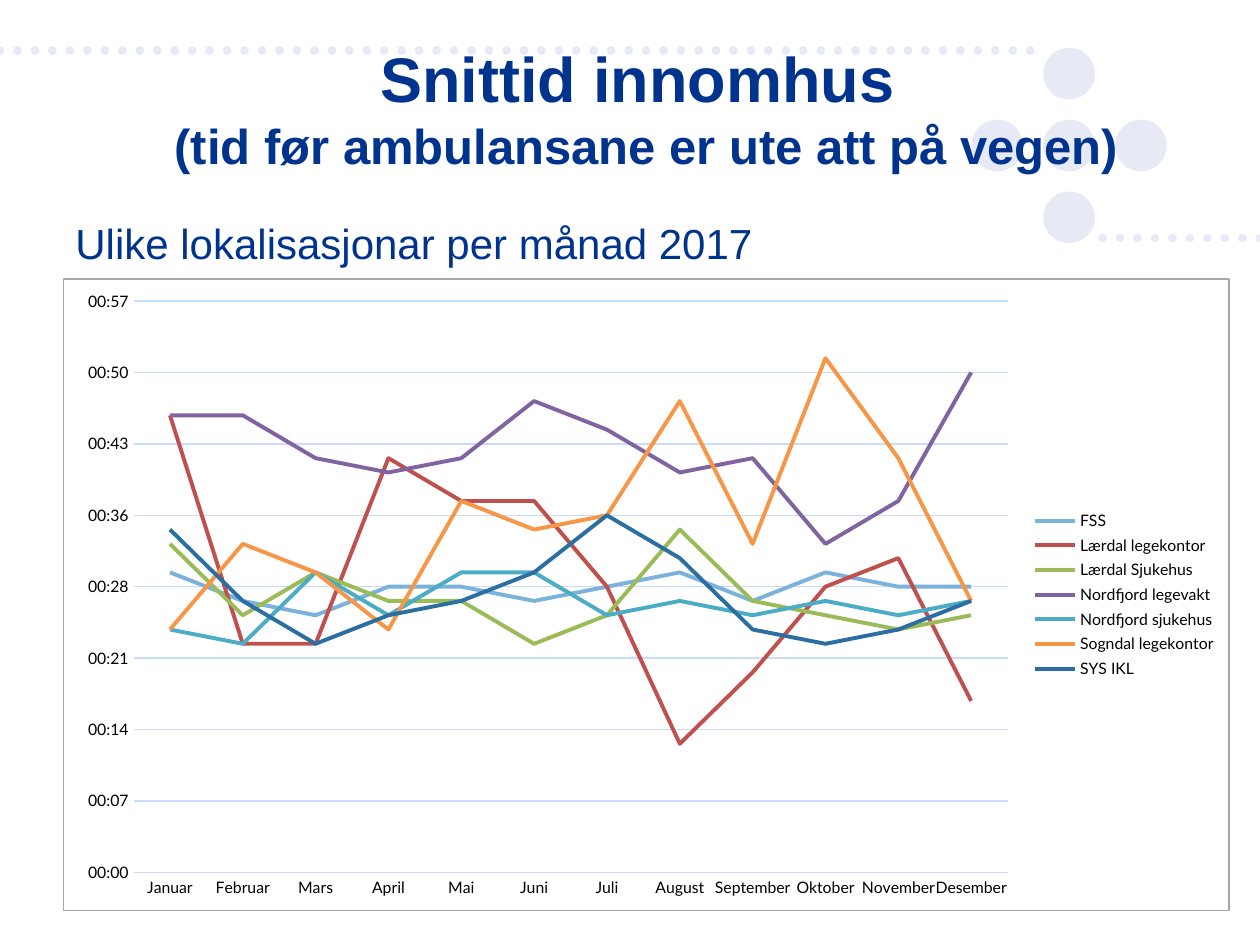
from lxml import etree
from pptx import Presentation
from pptx import oxml
from pptx.chart import data as cd
from pptx.dml.color import RGBColor
from pptx.enum import chart as ec, shapes as es, text as et
from pptx.oxml import ns
from pptx.util import Inches, Pt

NAVY = RGBColor(0x00, 0x33, 0x8D)
PALE = RGBColor(0xE7, 0xE9, 0xF5)
GRID = RGBColor(0xC8, 0xDC, 0xFF)
BLACK = RGBColor(0, 0, 0)

MONTHS = ["Januar", "Februar", "Mars", "April", "Mai", "Juni", "Juli", "August",
          "September", "Oktober", "November", "Desember"]
SITES = [
    ("FSS", RGBColor(0x7A, 0xB2, 0xDC),
     [.021, .019, .018, .02, .02, .019, .02, .021, .019, .021, .02, .02]),
    ("Lærdal legekontor", RGBColor(0xC0, 0x50, 0x4D),
     [.032, .016, .016, .029, .026, .026, .02, .009, .014, .02, .022, .012]),
    ("Lærdal Sjukehus", RGBColor(0x9B, 0xBB, 0x59),
     [.023, .018, .021, .019, .019, .016, .018, .024, .019, .018, .017, .018]),
    ("Nordfjord legevakt", RGBColor(0x80, 0x64, 0xA2),
     [.032, .032, .029, .028, .029, .033, .031, .028, .029, .023, .026, .035]),
    ("Nordfjord sjukehus", RGBColor(0x4B, 0xAC, 0xC6),
     [.017, .016, .021, .018, .021, .021, .018, .019, .018, .019, .018, .019]),
    ("Sogndal legekontor", RGBColor(0xF7, 0x96, 0x46),
     [.017, .023, .021, .017, .026, .024, .025, .033, .023, .036, .029, .019]),
    ("SYS IKL", RGBColor(0x2B, 0x6F, 0xA2),
     [.024, .019, .016, .018, .019, .021, .025, .022, .017, .016, .017, .019]),
]
FRAME = """<c:spPr %s><a:solidFill><a:srgbClr val="FFFFFF"/></a:solidFill>
<a:ln w="9525"><a:solidFill><a:srgbClr val="A6A6A6"/></a:solidFill></a:ln></c:spPr>"""
LAYOUT = """<c:layout %s><c:manualLayout><c:layoutTarget val="inner"/>
<c:xMode val="edge"/><c:yMode val="edge"/><c:x val="0.06"/><c:y val="0.035"/>
<c:w val="0.75"/><c:h val="0.905"/></c:manualLayout></c:layout>"""


def add_run(para, words, size, bold=False):
    """Add one navy run to a paragraph."""
    run = para.add_run()
    run.text = words
    font = run.font
    font.name, font.size, font.bold = "Arial", Pt(size), bold
    font.color.rgb = NAVY


def add_dots(slide, left, right, top):
    """Draw a level row of round dots."""
    line = slide.shapes.add_connector(
        es.MSO_CONNECTOR.STRAIGHT, Inches(left), Inches(top), Inches(right), Inches(top))
    line.line.color.rgb = PALE
    line.line.width = Pt(5)
    ln = line.line._get_or_add_ln()
    ln.set("cap", "rnd")
    etree.SubElement(ln, ns.qn("a:prstDash")).set("val", "sysDot")
    etree.SubElement(line._element.spPr, ns.qn("a:effectLst"))


def add_cross(slide, left, top, step, size):
    """Draw five discs as a cross, starting from the middle disc's corner."""
    for col, row in [(0, -1), (0, 1), (0, 0), (-1, 0), (1, 0)]:
        disc = slide.shapes.add_shape(
            es.MSO_SHAPE.OVAL, Inches(left + col * step), Inches(top + row * step),
            Inches(size), Inches(size))
        disc.shadow.inherit = False
        disc.fill.solid()
        disc.fill.fore_color.rgb = PALE
        disc.line.fill.background()


def set_title(slide, left, top, width, height):
    """Place the two-line title in front of the dots."""
    title = slide.shapes.title
    title.left, title.top = Inches(left), Inches(top)
    title.width, title.height = Inches(width), Inches(height)
    frame = title.text_frame
    frame.vertical_anchor = et.MSO_ANCHOR.MIDDLE
    para = frame.paragraphs[0]
    para.alignment = et.PP_ALIGN.CENTER
    add_run(para, "Snittid innomhus ", 36, True)
    para.add_line_break()
    add_run(para, "(tid før ambulansane er ute att på vegen)", 28, True)
    slide.shapes._spTree.append(title._element)


def add_lead(slide, left, top, width, height):
    """Add the line of text above the chart."""
    box = slide.shapes.add_textbox(Inches(left), Inches(top), Inches(width), Inches(height))
    frame = box.text_frame
    frame.word_wrap = True
    frame.vertical_anchor = et.MSO_ANCHOR.MIDDLE
    add_run(frame.paragraphs[0], "Ulike lokalisasjonar per månad 2017", 24)


def set_font(font, size):
    """Give a chart part its black lettering."""
    font.name, font.size = "Lato", Pt(size)
    font.color.rgb = BLACK


def set_axes(chart):
    """Format the month axis and the time axis."""
    cat, val = chart.category_axis, chart.value_axis
    for axis in (cat, val):
        axis.major_tick_mark = axis.minor_tick_mark = ec.XL_TICK_MARK.NONE
        set_font(axis.tick_labels.font, 9)
    cat.format.line.color.rgb = GRID
    cat.format.line.width = Pt(0.75)
    val.format.line.fill.background()
    val.minimum_scale, val.maximum_scale, val.major_unit = 0, 0.04, 0.005
    val.tick_labels.number_format = "hh:mm;@"
    val.tick_labels.number_format_is_linked = False
    grid = val.major_gridlines.format.line
    grid.color.rgb = GRID
    grid.width = Pt(0.75)


def add_times(slide, left, top, width, height):
    """Add the line chart of monthly times per site."""
    data = cd.CategoryChartData(number_format="hh:mm;@")
    data.categories = MONTHS
    for name, _, times in SITES:
        data.add_series(name, times)
    chart = slide.shapes.add_chart(
        ec.XL_CHART_TYPE.LINE, Inches(left), Inches(top), Inches(width), Inches(height),
        data).chart
    set_font(chart.font, 10)
    chart.has_title = False
    chart.has_legend = True
    chart.legend.position = ec.XL_LEGEND_POSITION.RIGHT
    chart.legend.include_in_layout = False
    set_font(chart.legend.font, 9)
    plot = chart.plots[0]
    plot.vary_by_categories = False
    for series, (_, color, _) in zip(plot.series, SITES):
        series.smooth = False
        series.marker.style = ec.XL_MARKER_STYLE.NONE
        series.format.line.color.rgb = color
        series.format.line.width = Pt(2.25)
    set_axes(chart)
    body = chart._chartSpace.find(ns.qn("c:chart"))
    body.addnext(oxml.parse_xml(FRAME % ns.nsdecls("c", "a")))
    area = body.find(ns.qn("c:plotArea"))
    for old in area.findall(ns.qn("c:layout")):
        area.remove(old)
    area.insert(0, oxml.parse_xml(LAYOUT % ns.nsdecls("c")))


def main():
    """Build and save the slide."""
    deck = Presentation()
    deck.slide_width, deck.slide_height = Inches(10), Inches(7.5)
    slide = deck.slides.add_slide(deck.slide_layouts[5])
    add_dots(slide, 0, 8.31, 0.4)
    add_dots(slide, 8.75, 10.35, 1.89)
    add_cross(slide, 8.28, 0.95, 0.57, 0.41)
    add_lead(slide, 0.5, 1.68, 8.77, 0.5)
    set_title(slide, 0.5, 0.26, 9.26, 1.18)
    add_times(slide, 0.5, 2.21, 9.26, 5.02)
    deck.save("out.pptx")


if __name__ == "__main__":
    main()
